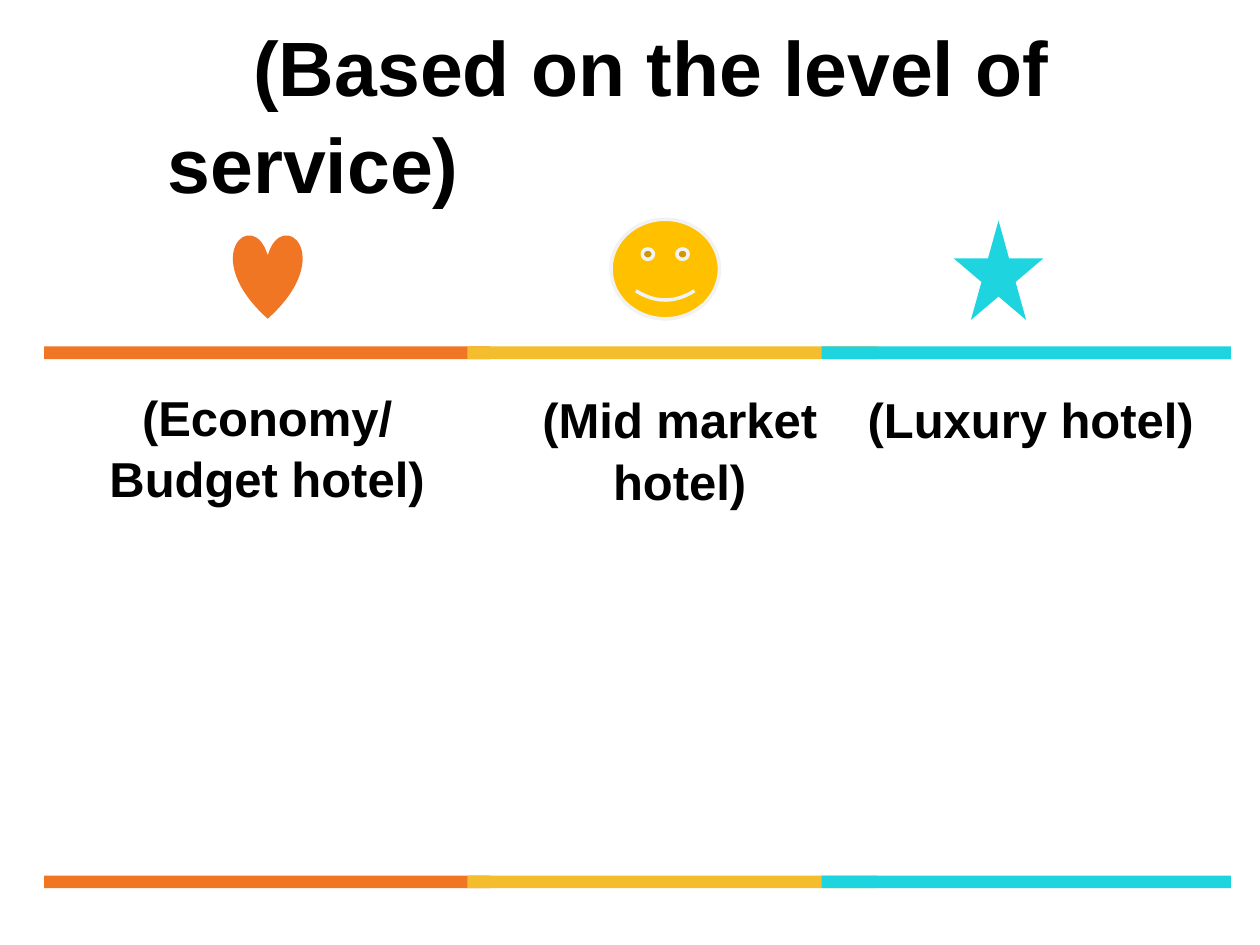
import pptx
import pptx.dml.color
import pptx.enum.shapes
import pptx.enum.text
import pptx.util

Inches = pptx.util.Inches
Pt = pptx.util.Pt
SHAPE = pptx.enum.shapes.MSO_SHAPE
ALIGN = pptx.enum.text.PP_ALIGN
AUTO_SIZE = pptx.enum.text.MSO_AUTO_SIZE


def paint(color_format, hex_color):
    color_format.rgb = pptx.dml.color.RGBColor.from_string(hex_color)


def write(paragraph, text, size, alignment):
    paragraph.alignment = alignment
    paragraph.line_spacing = 1.05
    run = paragraph.add_run()
    run.text = text
    run.font.name = "Arial"
    run.font.size = Pt(size)
    run.font.bold = True
    paint(run.font.color, "000000")


deck = pptx.Presentation()
deck.slide_width = Inches(10)
deck.slide_height = Inches(7.5)
slide = deck.slides.add_slide(deck.slide_layouts[5])

title = slide.shapes.title
title.left, title.top = Inches(1.11), Inches(0.24)
title.width, title.height = Inches(8.31), Inches(1.29)
title.text_frame.auto_size = AUTO_SIZE.NONE
title.text_frame.vertical_anchor = pptx.enum.text.MSO_ANCHOR.MIDDLE
heading = title.text_frame.paragraphs[0]
indents = heading._p.get_or_add_pPr()
indents.set("marL", str(Inches(0.12)))
indents.set("indent", str(Inches(0.68)))
write(heading, "(Based on the level of service)", 44, ALIGN.LEFT)

hotel_levels = [
    ("(Economy/ Budget hotel)", "F07624", 0.35, 3.54, 0.35, 3, 3.54),
    ("(Mid market hotel)", "F4BD2D", 3.71, 3.25, 3.83, 3.02, 3.13),
    ("(Luxury hotel) ", "1ED4DE", 6.52, 3.25, 6.67, 3.02, 3.13),
]
for name, color, bar_left, bar_width, left, top, width in hotel_levels:
    for bar_top in (2.75, 6.95):
        bar = slide.shapes.add_shape(SHAPE.RECTANGLE, Inches(bar_left), Inches(bar_top),
                                     Inches(bar_width), Inches(0.1))
        bar.shadow.inherit = False
        bar.fill.solid()
        paint(bar.fill.fore_color, color)
        bar.line.fill.background()
    label = slide.shapes.add_textbox(Inches(left), Inches(top), Inches(width), Inches(0.57))
    label.text_frame.word_wrap = True
    label.text_frame.auto_size = AUTO_SIZE.SHAPE_TO_FIT_TEXT
    write(label.text_frame.paragraphs[0], name, 28, ALIGN.CENTER)

icons = [
    (SHAPE.STAR_5_POINT, "1ED4DE", None, 7.57, 1.75, 0.71, 0.79),
    (SHAPE.SMILEY_FACE, "FFC000", "F2F2F2", 4.85, 1.74, 0.86, 0.79),
    (SHAPE.HEART, "F07624", None, 1.85, 1.86, 0.55, 0.67),
]
for preset, color, outline, left, top, width, height in icons:
    icon = slide.shapes.add_shape(preset, Inches(left), Inches(top), Inches(width), Inches(height))
    icon.shadow.inherit = False
    icon.fill.solid()
    paint(icon.fill.fore_color, color)
    if outline:
        paint(icon.line.color, outline)
        icon.line.width = Pt(2)
    else:
        icon.line.fill.background()

deck.save("out.pptx")
